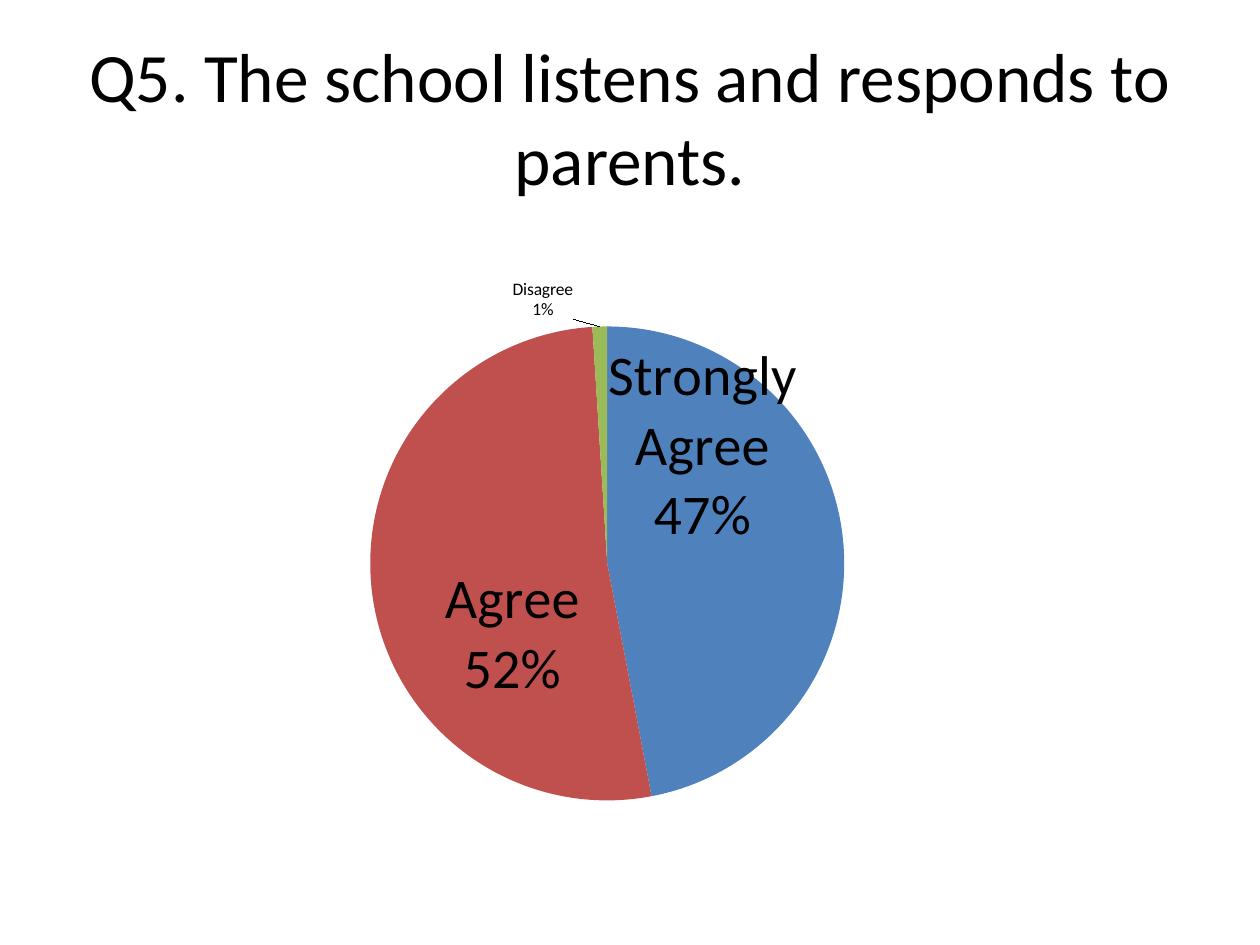
from pptx import Presentation
from pptx.chart.data import CategoryChartData
from pptx.dml.color import RGBColor
from pptx.enum.chart import XL_CHART_TYPE as ChartType, XL_LABEL_POSITION as LabelPos
from pptx.enum.text import MSO_ANCHOR as Anchor, PP_ALIGN as Align
from pptx.oxml import parse_xml
from pptx.oxml.ns import nsdecls
from pptx.util import Pt

BLACK = RGBColor(0x00, 0x00, 0x00)
BLUE = RGBColor(0x4F, 0x81, 0xBD)
RED = RGBColor(0xC0, 0x50, 0x4D)
GREEN = RGBColor(0x9B, 0xBB, 0x59)
PURPLE = RGBColor(0x80, 0x64, 0xA2)
FONT = "Calibri"
ANSWERS = [("SA", 47, BLUE), ("A", 52, RED), ("D", 1, GREEN), ("SD", 0, PURPLE)]
LABELS = [
    ("Strongly Agree\n47%", 32, LabelPos.CENTER, (-0.02, -0.17)),
    ("Agree\n52%", 32, LabelPos.CENTER, (0.02, 0.09)),
    ("Disagree\n1%", 10, LabelPos.OUTSIDE_END, (-0.05, 0)),
]


def style_font(font, size):
    """Apply the slide's typeface and colour at the given size."""
    font.name, font.size, font.bold = FONT, Pt(size), False
    font.color.rgb = BLACK


def manual_layout(**values):
    """Return a chart layout element with the given settings."""
    items = "".join(f'<c:{k} val="{v}"/>' for k, v in values.items())
    return parse_xml(f'<c:layout {nsdecls("c")}><c:manualLayout>{items}</c:manualLayout></c:layout>')


def add_title(slide, text):
    """Add the centred question heading."""
    sp = slide.shapes.add_textbox(Pt(36), Pt(21.6), Pt(648), Pt(90))
    tf = sp.text_frame
    tf.word_wrap = True
    tf.vertical_anchor = Anchor.MIDDLE
    tf.text = text
    p = tf.paragraphs[0]
    p.alignment = Align.CENTER
    style_font(p.runs[0].font, 39.6)


def label_point(series, index, text, size, position, offset):
    """Give one slice its own label, shifted from the default place."""
    label = series.points[index].data_label
    tf = label.text_frame
    tf.text = text
    for p in tf.paragraphs:
        for r in p.runs:
            style_font(r.font, size)
    label.position = position
    dlbl = series.data_labels._element.xpath(f"c:dLbl[c:idx/@val='{index}']")[0]
    dlbl.xpath("c:idx")[0].addnext(manual_layout(x=offset[0], y=offset[1]))
    for name, shown in (("showVal", "0"), ("showCatName", "1"), ("showPercent", "1")):
        dlbl.xpath(f"c:{name}")[0].set("val", shown)


def hide_label(series, index):
    """Remove the label of an empty slice."""
    series.points[index].data_label.position = LabelPos.CENTER
    dlbl = series.data_labels._element.xpath(f"c:dLbl[c:idx/@val='{index}']")[0]
    for child in list(dlbl)[1:]:
        dlbl.remove(child)
    dlbl.append(parse_xml(f'<c:delete {nsdecls("c")} val="1"/>'))


def add_pie(slide):
    """Add the pie chart of answers with its slice labels."""
    data = CategoryChartData()
    data.categories = [name for name, _, _ in ANSWERS]
    data.add_series("Series 1", [value for _, value, _ in ANSWERS])
    chart = slide.shapes.add_chart(
        ChartType.PIE, Pt(36), Pt(126), Pt(648), Pt(356.4), data).chart
    chart.has_title = chart.has_legend = False
    style_font(chart.font, 10)
    area = chart._chartSpace.xpath("c:chart/c:plotArea")[0]
    for layout in area.xpath("c:layout"):
        area.remove(layout)
    area.insert(0, manual_layout(
        layoutTarget="inner", xMode="edge", yMode="edge", x=0.27, y=0.17, w=0.42, h=0.76))
    plot = chart.plots[0]
    plot.vary_by_categories = True
    series = plot.series[0]
    for i, (_, _, color) in enumerate(ANSWERS):
        fill = series.points[i].format.fill
        fill.solid()
        fill.fore_color.rgb = color
    labels = series.data_labels
    labels.show_value = False
    labels.show_category_name = labels.show_percentage = True
    for i, label in enumerate(LABELS):
        label_point(series, i, *label)
    hide_label(series, len(LABELS))


def main():
    """Build the survey slide and save it."""
    prs = Presentation()
    prs.slide_width, prs.slide_height = Pt(720), Pt(540)
    s = prs.slides.add_slide(prs.slide_layouts[6])
    add_title(s, "Q5. The school listens and responds to parents.")
    add_pie(s)
    prs.save("out.pptx")


if __name__ == "__main__":
    main()
